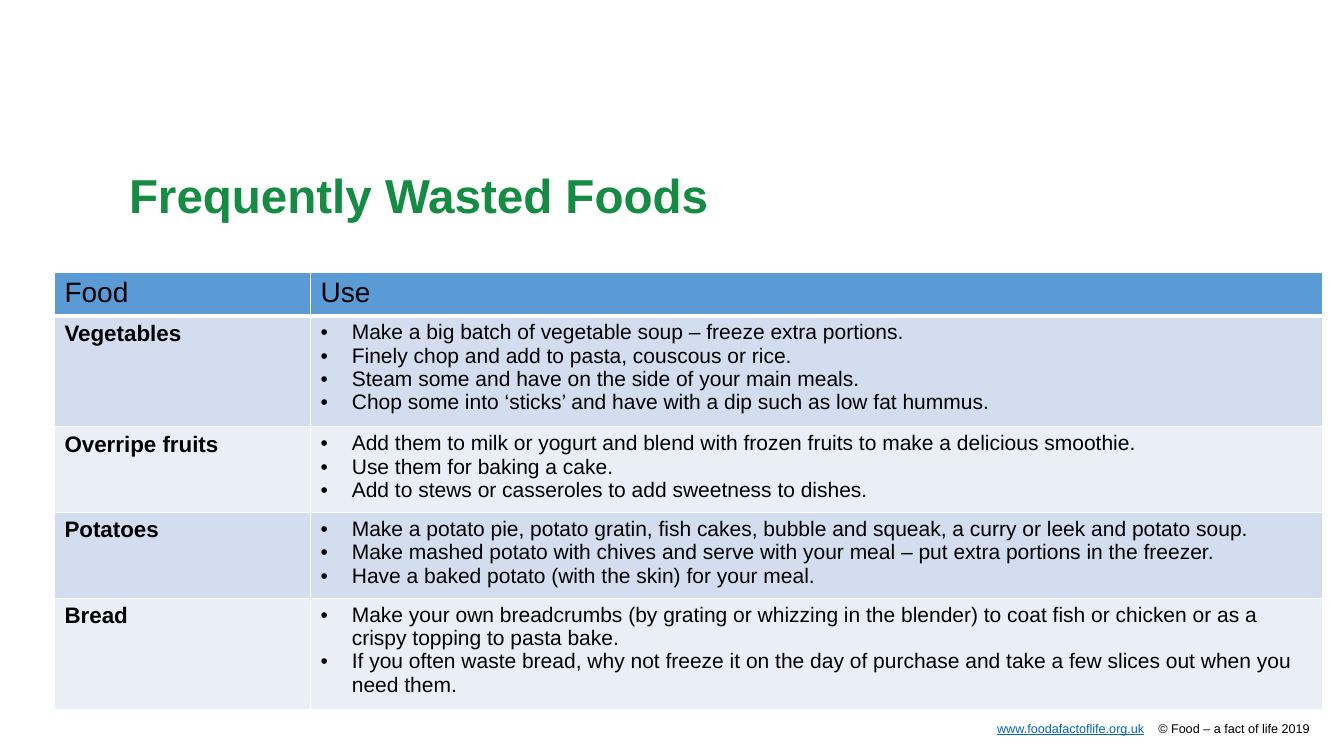
from dataclasses import dataclass

from lxml.etree import SubElement
from pptx import Presentation
from pptx.dml.color import RGBColor as Color
from pptx.enum.text import MSO_ANCHOR as Anchor, PP_ALIGN as Align
from pptx.oxml import parse_xml
from pptx.oxml.ns import nsdecls, qn
from pptx.util import Emu, Inches, Pt


@dataclass(frozen=True)
class Theme:
    """Colours, type sizes and font of the slide."""
    font: str = "Arial"
    green: str = "158B44"
    black: str = "000000"
    link: str = "0563C1"
    border: str = "FFFFFF"
    header: str = "5B9BD5"
    bands: tuple = ("D2DEEF", "EAEFF7")
    title_size: int = 34
    header_size: int = 20
    food_size: int = 16
    use_size: int = 15
    footer_size: int = 9


THEME = Theme()
WIDTH, HEIGHT = Inches(13.33), Inches(7.5)
COLUMNS = (2.54, 10.04)
HEADER_HEIGHT, LINE_HEIGHT, CELL_PADDING = 0.41, 0.23, 0.1
BULLET_INDENT = Inches(0.31)
FOODS = (
    ("Vegetables", 4, (
        "Make a big batch of vegetable soup – freeze extra portions.",
        "Finely chop and add to pasta, couscous or rice.",
        "Steam some and have on the side of your main meals.",
        "Chop some into ‘sticks’ and have with a dip such as low fat hummus.",
    )),
    ("Overripe fruits", 3, (
        "Add them to milk or yogurt and blend with frozen fruits to make a delicious smoothie.",
        "Use them for baking a cake.",
        "Add to stews or casseroles to add sweetness to dishes.",
    )),
    ("Potatoes", 3, (
        "Make a potato pie, potato gratin, fish cakes, bubble and squeak, a curry or leek and potato soup.",
        "Make mashed potato with chives and serve with your meal – put extra portions in the freezer.",
        "Have a baked potato (with the skin) for your meal.",
    )),
    ("Bread", 4, (
        "Make your own breadcrumbs (by grating or whizzing in the blender) to coat fish or chicken"
        " or as a crispy topping to pasta bake.",
        "If you often waste bread, why not freeze it on the day of purchase and take a few slices"
        " out when you need them.",
    )),
)


def add_run(paragraph, text, size, color=THEME.black, bold=False, underline=False):
    """Append one formatted run and return it."""
    run = paragraph.add_run()
    run.text = text
    font = run.font
    font.name, font.size, font.bold, font.underline = THEME.font, Pt(size), bold, underline
    font.color.rgb = Color.from_string(color)
    return run


def add_text_box(slide, left, top, width, height):
    """Add an unpadded text box, given as shares of the slide, and return its paragraph."""
    box = slide.shapes.add_textbox(
        Emu(round(left * WIDTH)), Emu(round(top * HEIGHT)),
        Emu(round(width * WIDTH)), Emu(round(height * HEIGHT)))
    frame = box.text_frame
    frame.word_wrap = True
    frame.vertical_anchor = Anchor.TOP
    frame.margin_left = frame.margin_right = frame.margin_top = frame.margin_bottom = 0
    return frame.paragraphs[0]


def add_bullet(paragraph):
    """Give a paragraph a hanging bullet."""
    properties = paragraph._p.get_or_add_pPr()
    properties.set("marL", str(BULLET_INDENT))
    properties.set("indent", str(-BULLET_INDENT))
    SubElement(properties, qn("a:buFont")).set("typeface", THEME.font)
    SubElement(properties, qn("a:buChar")).set("char", "•")


def style_cell(cell, fill, bottom=1):
    """Fill a cell and draw its four borders."""
    cell.fill.solid()
    cell.fill.fore_color.rgb = Color.from_string(fill)
    properties = cell._tc.get_or_add_tcPr()
    for index, (side, points) in enumerate((("L", 1), ("R", 1), ("T", 1), ("B", bottom))):
        properties.insert(index, parse_xml(
            f'<a:ln{side} {nsdecls("a")} w="{Pt(points)}"><a:solidFill>'
            f'<a:srgbClr val="{THEME.border}"/></a:solidFill></a:ln{side}>'))


def fill_cell(cell, lines, size, bold=False, bulleted=False):
    """Write one paragraph for each line."""
    frame = cell.text_frame
    for index, line in enumerate(lines):
        paragraph = frame.add_paragraph() if index else frame.paragraphs[0]
        if bulleted:
            add_bullet(paragraph)
        add_run(paragraph, line, size, bold=bold)


def add_food_table(slide):
    """Add the table of foods and their uses."""
    heights = [HEADER_HEIGHT] + [count * LINE_HEIGHT + CELL_PADDING for _, count, _ in FOODS]
    table = slide.shapes.add_table(
        len(heights), len(COLUMNS), Inches(0.54), Inches(2.7),
        Inches(sum(COLUMNS)), Inches(sum(heights))).table
    table.first_row = table.horz_banding = False
    for column, width in zip(table.columns, COLUMNS):
        column.width = Inches(width)
    for row, height in zip(table.rows, heights):
        row.height = Inches(height)
    for cell, heading in zip(table.rows[0].cells, ("Food", "Use")):
        style_cell(cell, THEME.header, bottom=3)
        fill_cell(cell, [heading], THEME.header_size)
    for index, (food, _, uses) in enumerate(FOODS):
        food_cell, use_cell = table.rows[index + 1].cells
        for cell in (food_cell, use_cell):
            style_cell(cell, THEME.bands[index % 2])
        fill_cell(food_cell, [food], THEME.food_size, bold=True)
        fill_cell(use_cell, uses, THEME.use_size, bulleted=True)


def add_title(slide):
    """Add the slide title."""
    paragraph = add_text_box(slide, 0.096, 0.228, 0.797, 0.105)
    paragraph.line_spacing = 0.9
    add_run(paragraph, "Frequently Wasted Foods", THEME.title_size, THEME.green, bold=True)


def add_footer(slide):
    """Add the web address and the copyright line."""
    paragraph = add_text_box(slide, 0.0945, 0.953, 0.88, 0.02)
    paragraph.alignment = Align.RIGHT
    add_run(paragraph, "www.foodafactoflife.org.uk", THEME.footer_size, THEME.link, underline=True)
    gap = add_run(paragraph, " ", THEME.footer_size)
    gap.font._element.set("spc", "750")
    add_run(paragraph, "© Food – a fact of life 2019", THEME.footer_size)


def main():
    """Build and save the slide."""
    presentation = Presentation()
    presentation.slide_width, presentation.slide_height = WIDTH, HEIGHT
    slide = presentation.slides.add_slide(presentation.slide_layouts[6])
    add_footer(slide)
    add_title(slide)
    add_food_table(slide)
    presentation.save("out.pptx")


if __name__ == "__main__":
    main()
